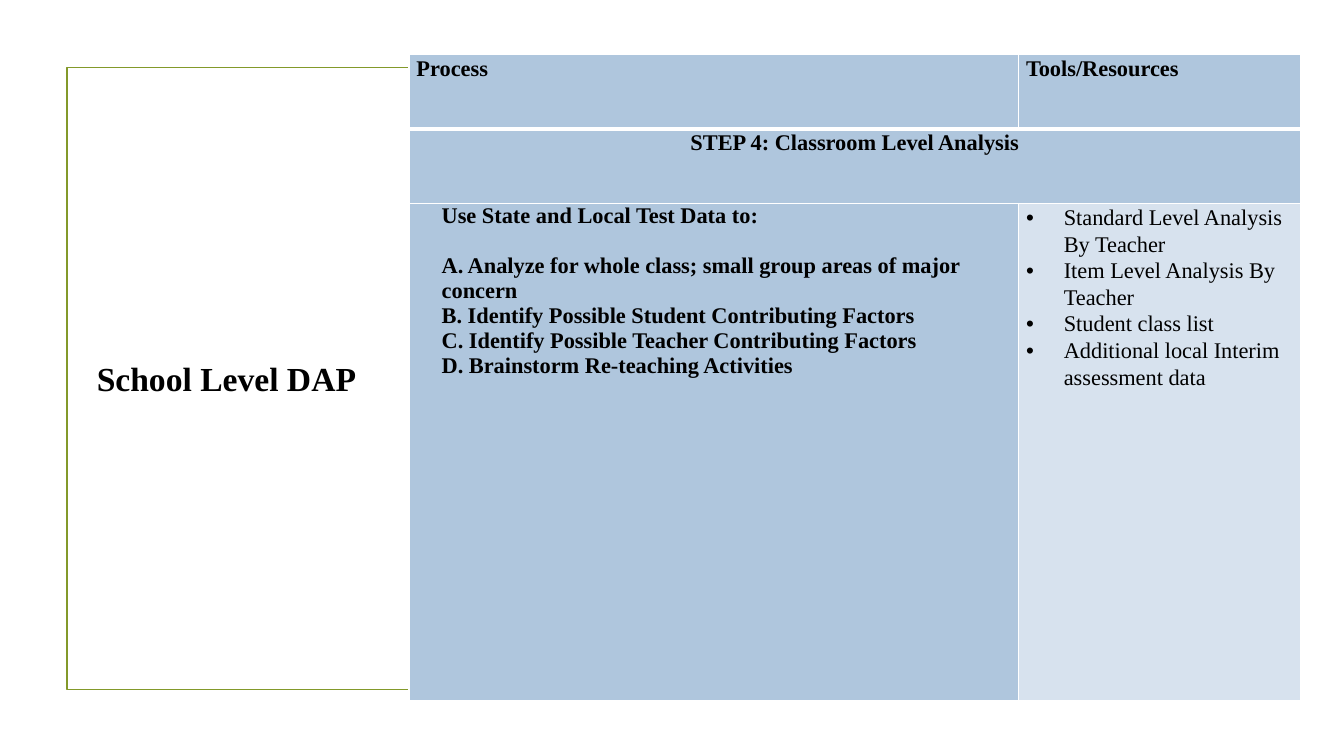
from lxml import etree
from pptx import Presentation
from pptx.dml.color import RGBColor
from pptx.enum import shapes, text
from pptx.oxml.ns import qn
from pptx.util import Pt

TITLE = "School Level DAP"
HEADERS = ["Process", "Tools/Resources"]
STEP = "STEP 4: Classroom Level Analysis"
TASKS = [
    "Use State and Local Test Data to:",
    "A. Analyze for whole class; small group areas of major concern",
    "B. Identify Possible Student Contributing Factors",
    "C. Identify Possible Teacher Contributing Factors",
    "D. Brainstorm Re-teaching Activities",
]
TOOLS = [
    "Standard Level Analysis By Teacher",
    "Item Level Analysis By Teacher",
    "Student class list",
    "Additional local Interim assessment data",
]

THEME = {
    "font": "Times New Roman", "title": 24, "body": 16,
    "text": "000000", "frame": "83992A", "border": "FFFFFF",
    "main": "AFC6DD", "light": "D7E2EE",
}
SLIDE = (960, 540)
FRAME = (47.7, 48.2, 864, 444.3)
TITLE_BOX = (61.9, 252, 230.4, 36)
TABLE_AT = (292.1, 39)
COLS = [435.4, 201.5]
ROWS = [53.3, 53.3, 355]
TASK_INDENT, TOOL_INDENT, TASK_GAP = 18, 27, 18
THIN, THICK = 1, 3


def rgb(name):
    return RGBColor.from_string(THEME[name])


def apply(obj, values):
    for name, value in values.items():
        setattr(obj, name, value)


def write(p, line, size="body", bold=True):
    r = p.add_run()
    r.text = line
    apply(r.font, {"name": THEME["font"], "size": Pt(THEME[size]), "bold": bold})
    r.font.color.rgb = rgb("text")


def indent(p, left, hanging=0):
    pPr = p._p.get_or_add_pPr()
    pPr.set("marL", str(Pt(left)))
    pPr.set("indent", str(Pt(-hanging)))
    return pPr


def add_border(cell, side, width):
    tcPr = cell._tc.get_or_add_tcPr()
    ln = etree.SubElement(tcPr, qn(f"a:ln{side}"), w=str(Pt(width)))
    fill = etree.SubElement(ln, qn("a:solidFill"))
    etree.SubElement(fill, qn("a:srgbClr"), val=THEME["border"])


def format_cell(cell, row, fill):
    widths = {"L": THIN, "R": THIN, "T": THICK if row == 1 else THIN,
              "B": THICK if row == 0 else THIN}
    for side, width in widths.items():
        add_border(cell, side, width)
    cell.fill.solid()
    cell.fill.fore_color.rgb = rgb(fill)
    apply(cell, {"margin_left": Pt(5.4), "margin_right": Pt(5.4),
                 "margin_top": 0, "margin_bottom": 0})


def add_lines(cell, lines):
    tf = cell.text_frame
    for i, line in enumerate(lines):
        yield i, line, tf.paragraphs[0] if i == 0 else tf.add_paragraph()


def add_frame(s):
    sp = s.shapes.add_shape(shapes.MSO_SHAPE.RECTANGLE, *map(Pt, FRAME))
    sp.shadow.inherit = False
    sp.fill.background()
    sp.line.color.rgb = rgb("frame")
    sp.line.width = Pt(1.25)


def add_title(s):
    sp = s.shapes.title
    apply(sp, dict(zip(("left", "top", "width", "height"), map(Pt, TITLE_BOX))))
    apply(sp.text_frame, {"word_wrap": True,
                          "vertical_anchor": text.MSO_ANCHOR.MIDDLE})
    p = sp.text_frame.paragraphs[0]
    p.alignment = text.PP_ALIGN.LEFT
    write(p, TITLE, "title")


def add_process_table(s):
    frame = s.shapes.add_table(len(ROWS), len(COLS), *map(Pt, TABLE_AT),
                               Pt(sum(COLS)), Pt(sum(ROWS)))
    table = frame.table
    for column, width in zip(table.columns, COLS):
        column.width = Pt(width)
    for row, height in zip(table.rows, ROWS):
        row.height = Pt(height)
    for row in range(len(ROWS)):
        for col in range(len(COLS)):
            fill = "light" if (row, col) == (2, 1) else "main"
            format_cell(table.cell(row, col), row, fill)
    table.cell(1, 0).merge(table.cell(1, 1))

    for col, header in enumerate(HEADERS):
        p = table.cell(0, col).text_frame.paragraphs[0]
        p.line_spacing = 1.07
        write(p, header)

    p = table.cell(1, 0).text_frame.paragraphs[0]
    apply(p, {"alignment": text.PP_ALIGN.CENTER, "line_spacing": 1.07})
    write(p, STEP)

    for i, line, p in add_lines(table.cell(2, 0), TASKS):
        indent(p, TASK_INDENT)
        if i == 1:
            p.space_before = Pt(TASK_GAP)
        write(p, line)

    for i, line, p in add_lines(table.cell(2, 1), TOOLS):
        pPr = indent(p, TOOL_INDENT, TOOL_INDENT)
        etree.SubElement(pPr, qn("a:buFont"), typeface="Arial")
        etree.SubElement(pPr, qn("a:buChar"), char="•")
        p.line_spacing = 1.07
        write(p, line, bold=False)


def main():
    prs = Presentation()
    prs.slide_width, prs.slide_height = map(Pt, SLIDE)
    s = prs.slides.add_slide(prs.slide_layouts[5])
    add_frame(s)
    add_title(s)
    add_process_table(s)
    prs.save("out.pptx")


if __name__ == "__main__":
    main()
